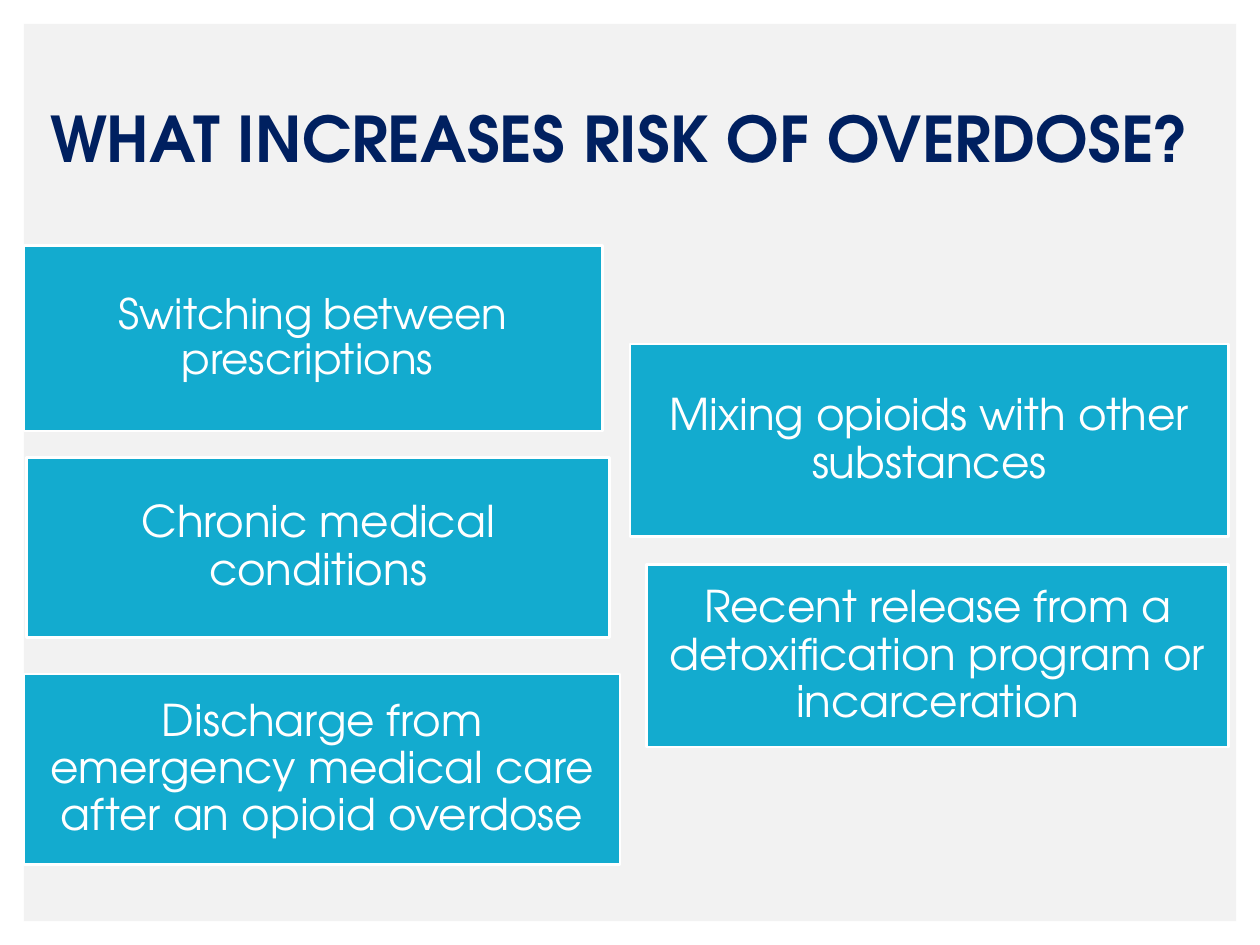
from pptx import Presentation
from pptx.dml.color import RGBColor
from pptx.enum.shapes import MSO_SHAPE
from pptx.enum.text import MSO_ANCHOR, PP_ALIGN
from pptx.util import Inches, Pt

RECT = MSO_SHAPE.RECTANGLE
MIDDLE = MSO_ANCHOR.MIDDLE
LEFT, CENTER = PP_ALIGN.LEFT, PP_ALIGN.CENTER
FONT = "TeX Gyre Adventor"


def color(code):
    return RGBColor.from_string(code)


def write(shape, text, size, code, align, bold=False):
    frame = shape.text_frame
    frame.text = text
    frame.word_wrap = True
    frame.vertical_anchor = MIDDLE
    line = frame.paragraphs[0]
    line.alignment = align
    line.line_spacing = 0.9
    font = line.runs[0].font
    font.name = FONT
    font.size = Pt(size)
    font.bold = bold
    font.color.rgb = color(code)


deck = Presentation()
deck.slide_width = Inches(10)
deck.slide_height = Inches(7.5)
slide = deck.slides.add_slide(deck.slide_layouts[6])
shapes = slide.shapes

panel = shapes.add_shape(RECT, Inches(0.19), Inches(0.19), Inches(9.62), Inches(7.12))
panel.shadow.inherit = False
panel.fill.solid()
panel.fill.fore_color.rgb = color("F2F2F2")
panel.line.fill.background()

title = shapes.add_textbox(Inches(0.3), Inches(0.64), Inches(9.5), Inches(0.97))
write(title, "WHAT INCREASES RISK OF OVERDOSE?", 36, "002060", LEFT, True)

risks = [
    (0.19, 1.95, 4.59, 1.47, 24, "Switching between prescriptions "),
    (5, 2.73, 4.75, 1.53, 25, "Mixing opioids with other substances"),
    (0.21, 3.63, 4.63, 1.43, 25, "Chronic medical conditions"),
    (5.13, 4.48, 4.62, 1.45, 25,
     "Recent release from a detoxification program or incarceration"),
    (0.19, 5.35, 4.73, 1.51, 25,
     "Discharge from emergency medical care after an opioid overdose"),
]
for left, top, width, height, size, text in risks:
    box = shapes.add_shape(RECT, Inches(left), Inches(top), Inches(width), Inches(height))
    box.shadow.inherit = False
    box.fill.solid()
    box.fill.fore_color.rgb = color("13ABCF")
    box.line.color.rgb = color("FFFFFF")
    box.line.width = Pt(1.5)
    write(box, text, size, "FFFFFF", CENTER)
    frame = box.text_frame
    frame.margin_left = frame.margin_right = Inches(0.1)
    frame.margin_top = frame.margin_bottom = Inches(0.1)

deck.save("out.pptx")
